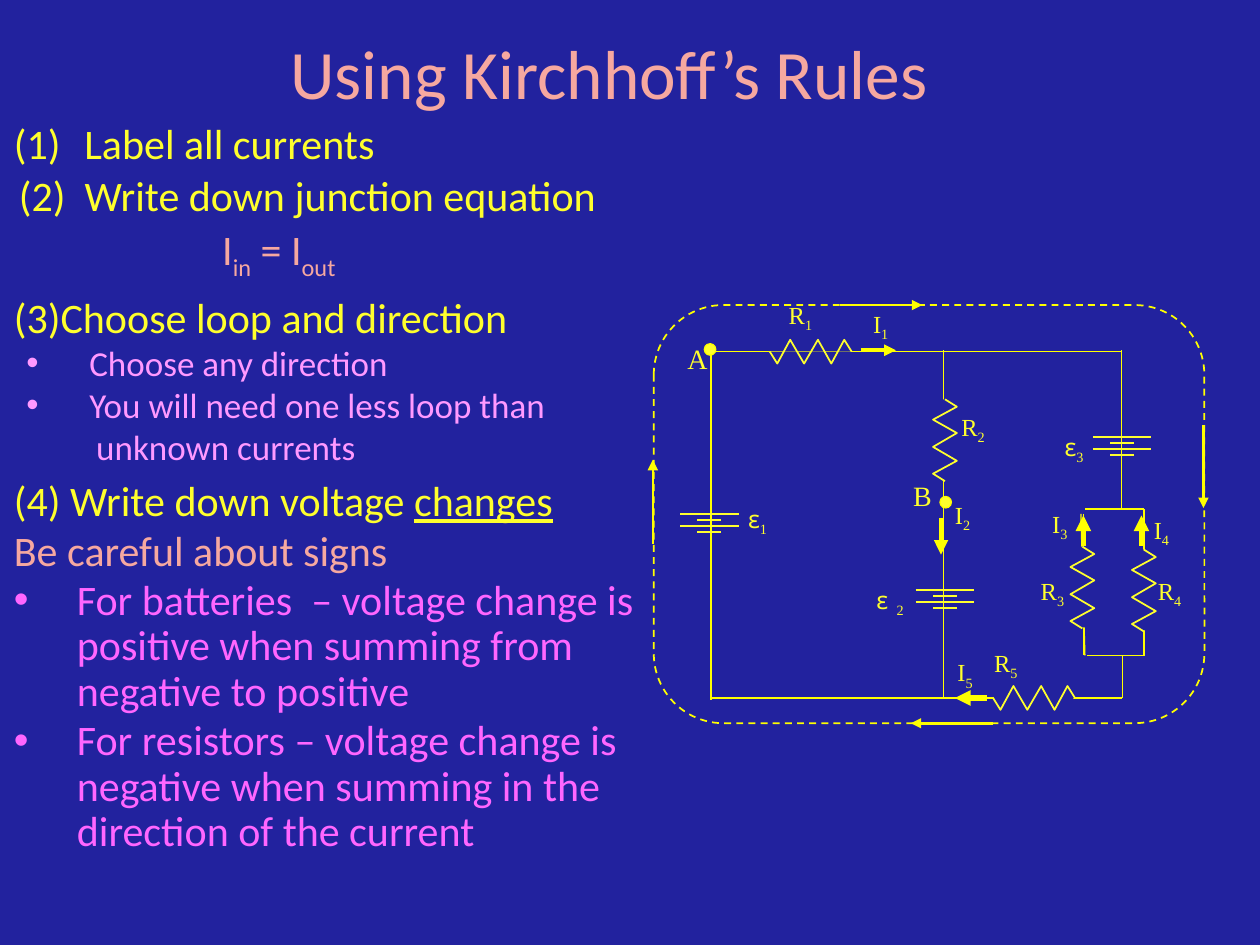
from lxml.etree import SubElement as Sub
from pptx import Presentation
from pptx.dml.color import RGBColor
from pptx.enum.dml import MSO_LINE
from pptx.enum.shapes import MSO_CONNECTOR, MSO_SHAPE
from pptx.enum.text import MSO_ANCHOR, MSO_AUTO_SIZE, PP_ALIGN
from pptx.oxml.ns import qn
from pptx.util import Cm, Pt

rgb = RGBColor.from_string
NAVY, YELLOW, LEMON = "22229E", "FFFF00", "FFFF2D"
SALMON, PINK, ROSE = "F6A8A0", "FF99FF", "FF66FF"
SERIF = "Times New Roman"


def say(para, text, size, color, face="Calibri", style=""):
    """Add one run; style is "sub", "under" or empty."""
    run = para.add_run()
    run.text = text
    run.font.size, run.font.name = Pt(size), face
    run.font.bold = False
    run.font.color.rgb = rgb(color)
    if style == "under":
        run.font.underline = True
    if style == "sub":
        run._r.get_or_add_rPr().set("baseline", "-25000")


def wire(x1, y1, x2, y2, width=0.75, color=YELLOW, arrow=False):
    line = shapes.add_connector(MSO_CONNECTOR.STRAIGHT, Cm(x1), Cm(y1), Cm(x2), Cm(y2))
    line.line.width = Pt(width)
    line.line.color.rgb = rgb(color)
    if arrow:
        Sub(line.line._get_or_add_ln(), qn("a:tailEnd"), type="triangle")
    Sub(line._element.spPr, qn("a:effectLst"))


prs = Presentation()
prs.slide_width, prs.slide_height = Cm(25.4), Cm(19.05)
slide = prs.slides.add_slide(prs.slide_layouts.get_by_name("Comparison"))
slide.background.fill.solid()
slide.background.fill.fore_color.rgb = rgb(NAVY)
shapes = slide.shapes

# Title
title = shapes.title
title.left, title.top, title.width, title.height = Cm(2.97), Cm(0.64), Cm(18.62), Cm(1.63)
title.text_frame.auto_size = MSO_AUTO_SIZE.NONE
title.text_frame.vertical_anchor = MSO_ANCHOR.MIDDLE
head = title.text_frame.paragraphs[0]
head.alignment = PP_ALIGN.CENTER
say(head, "Using Kirchhoff’s Rules", 39.6, SALMON)

# Steps: box, then paragraphs of margin, indent, spacing, space before, bullet, size, runs
steps = [
    ((0, 2.34, 11.86, 4.32), [
        (1.42, -1.42, 0.9, 0, "(1)", 24, [("Label all currents", LEMON, "")])]),
    ((0.1, 3.38, 12.9, 2.24), [
        (0, 0, 0.9, 0, "", 24, [("(2)  Write down junction equation", LEMON, "")]),
        (4.1, 0, 0.9, 2.4, "", 24, [("I", SALMON, ""), ("in", SALMON, "sub"),
                                    (" = I", SALMON, ""), ("out", SALMON, "sub")])]),
    ((0, 5.72, 12.9, 7.09), [
        (1.27, -1.27, 1.0, 0, "", 24, [("(3)Choose loop and direction", LEMON, "")]),
        (1.52, -1.27, 1.0, 0, "•", 20, [("Choose any direction", PINK, "")]),
        (1.52, -1.27, 1.0, 0, "•", 20, [("You will need one less loop than", PINK, "")]),
        (1.66, 0, 1.0, 0, "", 20, [("unknown currents", PINK, "")])]),
    ((0, 9.53, 13.13, 9.17), [
        (1.27, -1.27, 0.9, 0, "", 24, [("(4) Write down voltage ", LEMON, ""),
                                       ("changes", LEMON, "under")]),
        (1.27, -1.27, 0.9, 2.4, "", 24, [("Be careful about signs", SALMON, "")]),
        (1.27, -1.27, 0.9, 2.4, "•", 24, [
            ("For batteries  – voltage change is positive when summing from "
             "negative to positive", ROSE, "")]),
        (1.27, -1.27, 0.9, 2.4, "•", 24, [
            ("For resistors – voltage change is negative when summing in the "
             "direction of the current", ROSE, "")])]),
]
bodies = [p for p in slide.placeholders if p.placeholder_format.idx > 0]
for body, (box, paras) in zip(bodies, steps):
    body.left, body.top, body.width, body.height = map(Cm, box)
    frame = body.text_frame
    frame.word_wrap = True
    frame.auto_size = MSO_AUTO_SIZE.NONE
    frame.vertical_anchor = MSO_ANCHOR.TOP
    frame.margin_left = frame.margin_right = Cm(0.28)
    frame.margin_top = frame.margin_bottom = Cm(0.15)
    for i, (margin, indent, space, before, bullet, size, runs) in enumerate(paras):
        para = frame.add_paragraph() if i else frame.paragraphs[0]
        para.alignment = PP_ALIGN.LEFT
        para.line_spacing = space
        para.space_before = Pt(before)
        props = para._p.get_or_add_pPr()
        props.set("marL", str(Cm(margin)))
        props.set("indent", str(Cm(indent)))
        if bullet == "(1)":
            Sub(props, qn("a:buAutoNum"), type="arabicParenBoth")
        elif bullet:
            Sub(props, qn("a:buChar"), char=bullet)
        else:
            Sub(props, qn("a:buNone"))
        for text, color, style in runs:
            say(para, text, size, color, style=style)

# Loop with its direction arrows
loop = shapes.add_shape(MSO_SHAPE.ROUNDED_RECTANGLE, Cm(13.18), Cm(6.15), Cm(11.1), Cm(8.43))
loop.shadow.inherit = False
loop.fill.background()
loop.line.color.rgb = rgb(YELLOW)
loop.line.width = Pt(1)
loop.line.dash_style = MSO_LINE.DASH
for ends in [(16.94, 6.15, 18.59, 6.15), (24.26, 8.56, 24.26, 10.24),
             (20.02, 14.58, 18.36, 14.58), (13.16, 10.97, 13.16, 9.27)]:
    wire(*ends, 1.5, arrow=True)

# Circuit wires
for ends in [(14.33, 7.06, 14.33, 14.12), (14.35, 7.09, 22.61, 7.09),
             (19.02, 7.06, 19.02, 14.07), (22.61, 7.06, 22.61, 10.26),
             (14.35, 14.07, 22.61, 14.07), (21.87, 10.26, 23.06, 10.26),
             (21.92, 13.21, 23.09, 13.21), (22.63, 13.21, 22.63, 14.07),
             (21.84, 10.36, 21.84, 13.21), (21.79, 10.36, 21.87, 13.21),
             (23.06, 10.26, 23.06, 13.21)]:
    wire(*ends)

# Batteries: long and short plates in turn
for x, y in [(14.3, 10.36), (19.05, 11.89), (22.62, 8.81)]:
    for i in range(4):
        half = 0.24 if i % 2 else 0.59
        wire(x - half, y + 0.12 * i, x + half, y + 0.12 * i, 1, LEMON)

# Resistors: start point, upright or not, masked or not
along = [0, 0.15, 0.41, 0.69, 0.97, 1.24, 1.5, 1.65]
across = [0, 0.24, -0.24, 0.24, -0.24, 0.24, -0.24, 0]
for x, y, upright, masked in [(15.52, 7.09, False, False), (19.05, 9.7, True, True),
                              (20.02, 14.07, False, True), (21.82, 12.67, True, True),
                              (23.06, 12.73, True, True)]:
    if masked:
        box = (x - 0.25, y - 1.65, 0.5, 1.63) if upright else (x + 0.02, y - 0.25, 1.6, 0.5)
        mask = shapes.add_shape(MSO_SHAPE.RECTANGLE, *map(Cm, box))
        mask.shadow.inherit = False
        mask.fill.solid()
        mask.fill.fore_color.rgb = rgb(NAVY)
        mask.line.fill.background()
    dots = [(Cm(x - b), Cm(y - a)) if upright else (Cm(x + a), Cm(y + b))
            for a, b in zip(along, across)]
    path = shapes.build_freeform(*dots[0])
    path.add_line_segments(dots[1:], close=False)
    zigzag = path.convert_to_shape()
    zigzag.shadow.inherit = False
    zigzag.fill.solid()
    zigzag.fill.fore_color.rgb = rgb(NAVY)
    zigzag.line.color.rgb = rgb(LEMON)
    zigzag.line.width = Pt(1)

# Current arrows
for *ends, width in [(17.35, 7.06, 18.06, 7.06, 2.25), (18.97, 10.44, 18.97, 11.18, 2.75),
                     (21.84, 11, 21.84, 10.39, 3), (23.01, 11, 23.01, 10.39, 3),
                     (19.89, 14.07, 19.25, 14.07, 3)]:
    wire(*ends, width, arrow=True)

# Junction dots
for x, y in [(14.2, 6.93), (18.95, 10.01)]:
    dot = shapes.add_shape(MSO_SHAPE.OVAL, Cm(x), Cm(y), Cm(0.23), Cm(0.23))
    dot.shadow.inherit = False
    dot.fill.solid()
    dot.fill.fore_color.rgb = rgb(LEMON)
    dot.line.color.rgb = rgb(YELLOW)
    dot.line.width = Pt(0.75)

# Labels: left, top, width, name, subscript
for x, y, w, name, sub in [
        (15.65, 5.92, 3.25, "R", "1"), (19.13, 8.18, 3.25, "R", "2"),
        (20.73, 11.48, 1.88, "R", "3"), (23.09, 11.48, 1.88, "R", "4"),
        (19.79, 12.93, 3.25, "R", "5"), (17.35, 6.1, 1.42, "I", "1"),
        (19, 9.96, 1.42, "I", "2"), (20.96, 10.13, 1.42, "I", "3"),
        (23.01, 10.26, 1.42, "I", "4"), (19.05, 13.13, 1.42, "I", "5"),
        (14.83, 10.03, 1.19, "ε", "1"), (17.42, 11.66, 1.17, "ε ", "2"),
        (21.21, 8.59, 1.19, "ε", "3"), (13.61, 6.76, 1.19, "A", ""),
        (18.16, 9.53, 1.19, "B", "")]:
    label = shapes.add_textbox(Cm(x), Cm(y), Cm(w), Cm(0.84 if sub else 0.94))
    label.text_frame.word_wrap = True
    para = label.text_frame.paragraphs[0]
    say(para, name, 14 if sub else 16, LEMON, "Comic Neue" if "ε" in name else SERIF)
    if sub:
        say(para, sub, 14, LEMON, SERIF, "sub")

prs.save("out.pptx")
